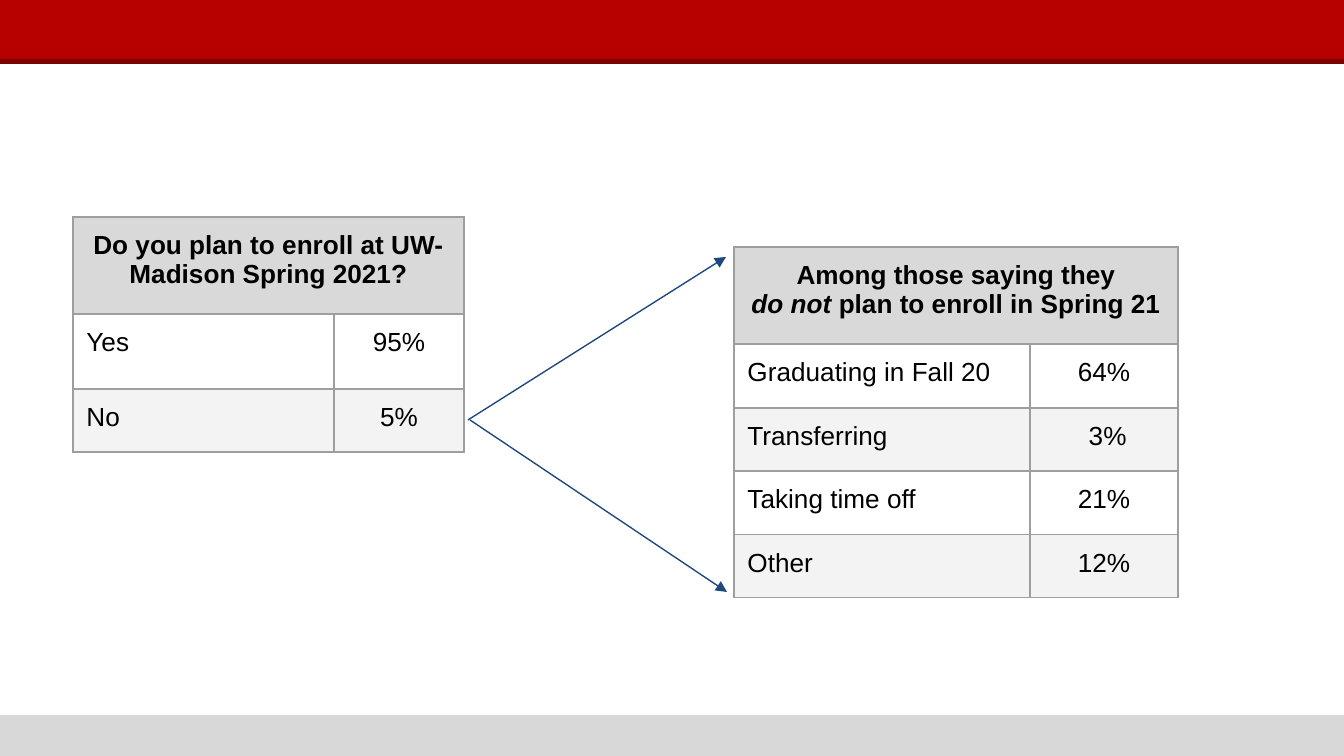
"""Build the Spring 2021 enrollment slide: two survey tables joined by arrows."""
import pptx
import pptx.dml.color
import pptx.enum.shapes
import pptx.enum.text
import pptx.oxml
import pptx.oxml.ns
import pptx.util

PX = 914400 / 134.4
THEME = {
    "red": "B70000", "dark_red": "7B0000", "footer": "D8D8D8",
    "header": "D9D9D9", "band": "F3F3F3", "plain": "FFFFFF",
    "border": "9E9E9E", "arrow": "1F497D", "text": "000000",
    "font": "Arial", "size": 14, "line": 0.75,
}
CENTER = pptx.enum.text.PP_ALIGN.CENTER
LEFT = pptx.enum.text.PP_ALIGN.LEFT


def emu(*lengths):
    return [pptx.util.Emu(round(length * PX)) for length in lengths]


def color(key):
    return pptx.dml.color.RGBColor.from_string(THEME[key])


deck = pptx.Presentation()
deck.slide_width, deck.slide_height = emu(1344, 756)
slide = deck.slides.add_slide(deck.slide_layouts[6])

for top, height, key in [(715, 41, "footer"), (0, 60, "red"), (59, 5, "dark_red")]:
    band = slide.shapes.add_shape(
        pptx.enum.shapes.MSO_SHAPE.RECTANGLE, *emu(0, top, 1344, height))
    band.shadow.inherit = False
    band.fill.solid()
    band.fill.fore_color.rgb = color(key)
    band.line.fill.background()

surveys = [
    {
        "place": (73, 217), "columns": (261, 130), "rows": (97, 75, 63),
        "question": [[("Do you plan to enroll at UW-Madison Spring 2021?", False)]],
        "answers": [("Yes", "95%"), ("No", "5%")],
    },
    {
        "place": (734, 247), "columns": (296, 148), "rows": (97, 64, 63, 64, 63),
        "question": [[("Among those saying they", False)],
                     [("do not ", True), ("plan to enroll in Spring 21", False)]],
        "answers": [("Graduating in Fall 20", "64%"), ("Transferring", " 3%"),
                    ("Taking time off", "21%"), ("Other", "12%")],
    },
]
for survey in surveys:
    columns, rows = survey["columns"], survey["rows"]
    table = slide.shapes.add_table(
        len(rows), len(columns), *emu(*survey["place"], sum(columns), sum(rows))).table
    table.first_row = table.horz_banding = False
    for column, width in zip(table.columns, emu(*columns)):
        column.width = width
    for row, height in zip(table.rows, emu(*rows)):
        row.height = height
    table.cell(0, 0).merge(table.cell(0, 1))

    contents = [(survey["question"], [])]
    contents += [[[[(part, False)]] for part in answer] for answer in survey["answers"]]
    for row_index, row_content in enumerate(contents):
        for column_index, paragraphs in enumerate(row_content):
            cell = table.cell(row_index, column_index)
            for side in ("lnL", "lnR", "lnT", "lnB"):
                cell._tc.get_or_add_tcPr().append(pptx.oxml.parse_xml(
                    f'<a:{side} {pptx.oxml.ns.nsdecls("a")} w="{pptx.util.Pt(THEME["line"])}">'
                    f'<a:solidFill><a:srgbClr val="{THEME["border"]}"/></a:solidFill></a:{side}>'))
            is_header = row_index == 0
            cell.fill.solid()
            cell.fill.fore_color.rgb = color(
                "header" if is_header else ("band", "plain")[row_index % 2])
            for margin in ("left", "right", "top", "bottom"):
                setattr(cell, f"margin_{margin}", pptx.util.Inches(0.1))
            for index, runs in enumerate(paragraphs):
                frame = cell.text_frame
                paragraph = frame.add_paragraph() if index else frame.paragraphs[0]
                paragraph.alignment = CENTER if is_header or column_index else LEFT
                for words, italic in runs:
                    run = paragraph.add_run()
                    run.text = words
                    run.font.color.rgb = color("text")
                    style = {"name": THEME["font"], "size": pptx.util.Pt(THEME["size"]),
                             "bold": is_header, "italic": italic}
                    for attribute, value in style.items():
                        setattr(run.font, attribute, value)

for ends in [(468, 420, 726, 257), (470, 420, 727, 592)]:
    arrow = slide.shapes.add_connector(
        pptx.enum.shapes.MSO_CONNECTOR.STRAIGHT, *emu(*ends))
    arrow.line.color.rgb = color("arrow")
    arrow.line.width = pptx.util.Pt(THEME["line"])
    arrow.line._get_or_add_ln().append(pptx.oxml.parse_xml(
        f'<a:tailEnd {pptx.oxml.ns.nsdecls("a")} type="triangle"/>'))
    arrow._element.spPr.append(pptx.oxml.parse_xml(
        f'<a:effectLst {pptx.oxml.ns.nsdecls("a")}/>'))

deck.save("out.pptx")
